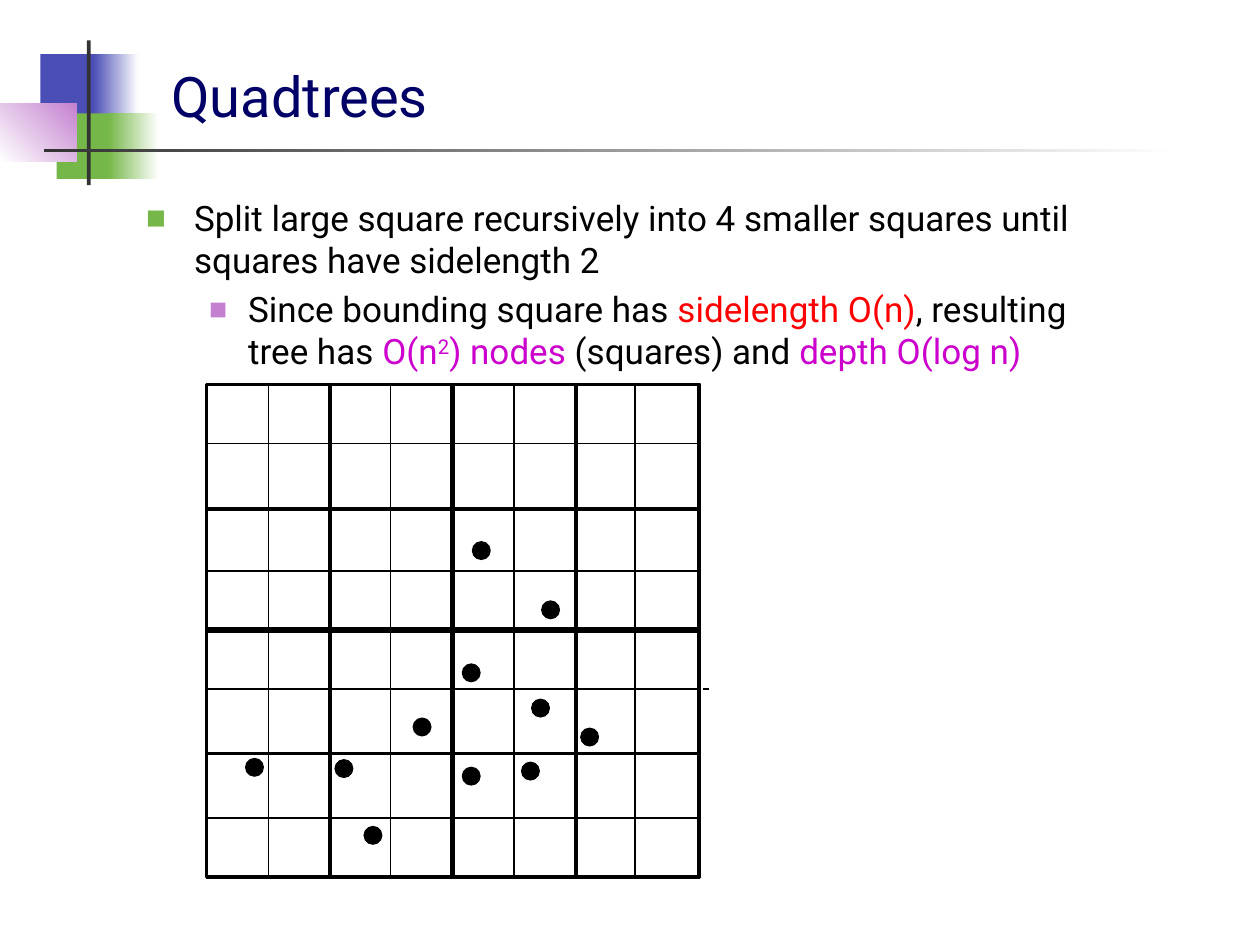
from lxml.etree import SubElement
from pptx import Presentation
from pptx.dml.color import RGBColor
from pptx.enum.dml import MSO_LINE
from pptx.enum.shapes import MSO_CONNECTOR, MSO_SHAPE
from pptx.enum.text import MSO_ANCHOR, MSO_AUTO_SIZE, PP_ALIGN
from pptx.oxml.ns import qn
from pptx.util import Inches, Pt

COLORS = {"blue": "4B4EB5", "green": "76B749", "pink": "C481CF",
          "dark": "333333", "white": "FFFFFF", "black": "000000",
          "navy": "000066", "red": "FF0000", "purple": "CC00CC"}
FONT = "Roboto"


def color(name):
    return RGBColor.from_string(COLORS[name])


def place(shape, box):
    shape.left, shape.top, shape.width, shape.height = map(Inches, box)


def write(para, words, size=20, tint="black", raised=False):
    run = para.add_run()
    run.text = words
    run.font.name, run.font.size = FONT, Pt(size)
    run.font.color.rgb = color(tint)
    if raised:
        run.font._element.set("baseline", "30000")


def draw(slide, kind, box, fill=None, fade=None, angle=0, edge=0):
    shape = slide.shapes.add_shape(kind, *map(Inches, box))
    shape.shadow.inherit = False
    if fade:
        shape.fill.gradient()
        shape.fill.gradient_angle = angle
        for stop, name in zip(shape.fill.gradient_stops, (fill, fade)):
            stop.color.rgb = color(name)
            stop.position = 0 if name == fill else 1
    elif fill:
        shape.fill.solid()
        shape.fill.fore_color.rgb = color(fill)
    else:
        shape.fill.background()
    if edge:
        shape.line.color.rgb = color("black")
        shape.line.width = Pt(edge)
    else:
        shape.line.fill.background()


def rule(slide, start, end, width, dash=False):
    line = slide.shapes.add_connector(
        MSO_CONNECTOR.STRAIGHT, *map(Inches, (*start, *end)))
    line.line.color.rgb = color("black")
    line.line.width = Pt(width)
    if dash:
        line.line.dash_style = MSO_LINE.DASH
    SubElement(line._element.spPr, qn("a:effectLst"))


def bullet(para, tint, share, left, hang):
    props = para._p.get_or_add_pPr()
    props.set("marL", str(Inches(left)))
    props.set("indent", str(-Inches(hang)))
    before = SubElement(props, qn("a:spcBef"))
    SubElement(before, qn("a:spcPct"), val="20000")
    mark = SubElement(props, qn("a:buClr"))
    SubElement(mark, qn("a:srgbClr"), val=COLORS[tint])
    SubElement(props, qn("a:buSzPct"), val=str(share * 1000))
    SubElement(props, qn("a:buFont"), typeface=FONT)
    SubElement(props, qn("a:buChar"), char="■")


# Overlapping colour blocks with a cross of two bars
def corner(slide, x, y):
    for left, top, wide, high, fill, fade, angle in (
            (0.32, 0.11, 0.48, 0.52, "blue", None, 0),
            (0.74, 0.11, 0.36, 0.52, "blue", "white", 0),
            (0.45, 0.58, 0.46, 0.52, "green", None, 0),
            (0.86, 0.58, 0.40, 0.52, "green", "white", 0),
            (0, 0.50, 0.61, 0.46, "white", "pink", 45),
            (0.69, 0, 0.03, 1.15, "dark", None, 0),
            (0.35, 0.86, 9, 0.03, "dark", "white", 0)):
        draw(slide, MSO_SHAPE.RECTANGLE, (x + left, y + top, wide, high),
             fill, fade, angle)


def head(slide, box):
    title = slide.shapes.title
    place(title, box)
    frame = title.text_frame
    frame.auto_size = MSO_AUTO_SIZE.NONE
    frame.vertical_anchor = MSO_ANCHOR.BOTTOM
    para = frame.paragraphs[0]
    para.alignment = PP_ALIGN.LEFT
    write(para, "Quadtrees", size=32, tint="navy")


def points(slide, box):
    body = slide.placeholders[1]
    place(body, box)
    frame = body.text_frame
    frame.auto_size = MSO_AUTO_SIZE.NONE
    main = frame.paragraphs[0]
    bullet(main, "green", 60, 0.38, 0.38)
    write(main, "Split large square recursively into 4 smaller squares "
                "until squares have sidelength 2")
    sub = frame.add_paragraph()
    sub.level = 1
    bullet(sub, "pink", 55, 0.81, 0.31)
    for words, tint in (("Since bounding square has ", "black"),
                        ("sidelength O(n)", "red"),
                        (", resulting tree has ", "black"),
                        ("O(n", "purple"), ("2", "purple"),
                        (") nodes ", "purple"),
                        ("(squares) and ", "black"),
                        ("depth O(log n)", "purple")):
        write(sub, words, tint=tint, raised=words == "2")


# Square split three times: the first split has the thickest lines
def tree(slide, x, y, side):
    dots = ((1.02, 2.98), (2.97, 2.73), (2.03, 2.22), (2.03, 3.04),
            (2.50, 3.00), (1.64, 2.65), (2.66, 1.72), (0.31, 2.97),
            (2.11, 1.25), (2.58, 2.50), (1.25, 3.51))
    for left, top in dots:
        draw(slide, MSO_SHAPE.OVAL, (x + left, y + top, 0.14, 0.14),
             "black", edge=0.75)
    draw(slide, MSO_SHAPE.RECTANGLE, (x, y, side, side), edge=2)

    cols = (0.49, 0.98, 1.46, 1.95, 2.44, 2.93, 3.40)
    rows = (0.47, 0.99, 1.48, 1.95, 2.42, 2.93, 3.44)
    widths = (1, 2, 1, 3, 1, 2, 1)
    for dash in (True, False):
        for col, row, width in zip(cols, rows, widths):
            weight = 1 if dash else width
            # One dashed row sits a little to the right
            shift = 0.08 if dash and row == rows[4] else 0
            rule(slide, (x + col, y), (x + col, y + side), weight, dash)
            rule(slide, (x + shift, y + row),
                 (x + shift + side, y + row), weight, dash)


def main():
    deck = Presentation()
    deck.slide_width, deck.slide_height = Inches(10), Inches(7.5)
    slide = deck.slides.add_slide(deck.slide_layouts[1])
    corner(slide, 0, 0.32)
    head(slide, (1.26, 0.23, 8.52, 0.84))
    points(slide, (1.06, 1.51, 7.88, 1.39))
    tree(slide, 1.64, 3.05, 3.91)
    deck.save("out.pptx")


if __name__ == "__main__":
    main()
